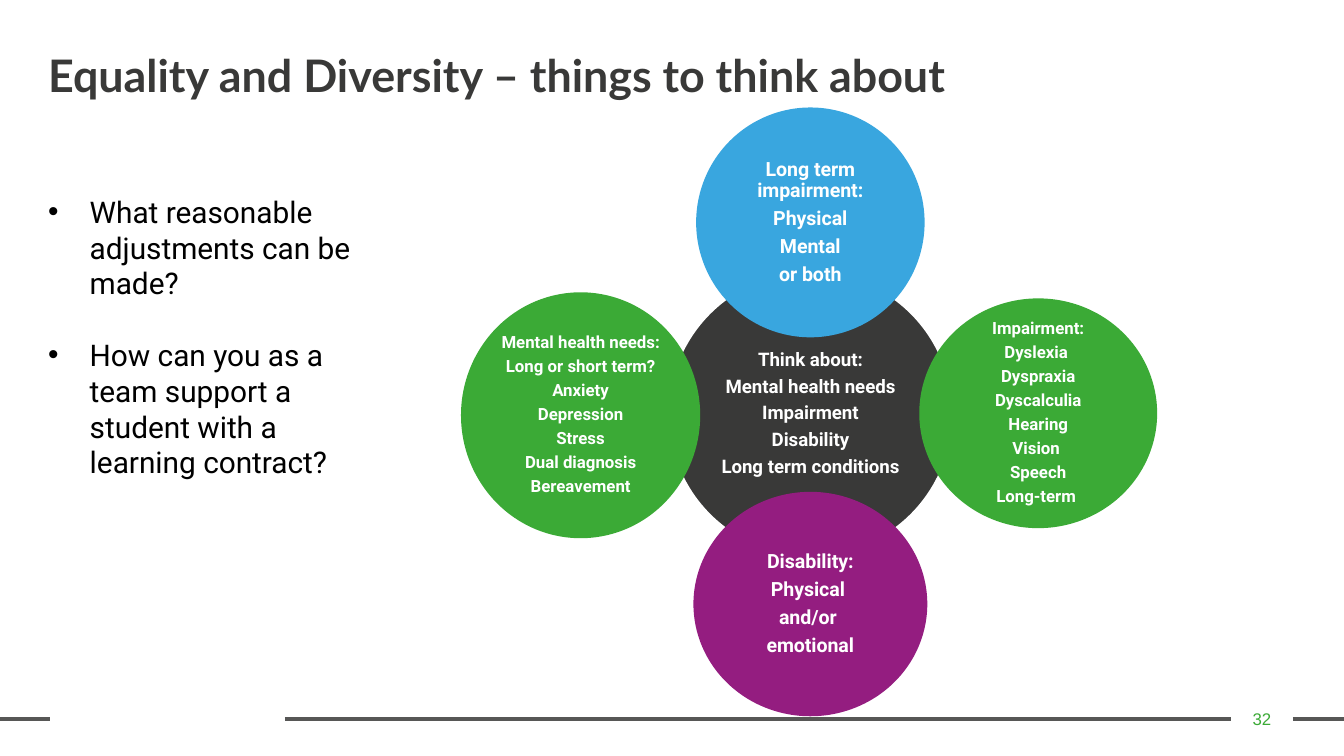
from lxml.etree import SubElement as Sub
from pptx import Presentation
from pptx.dml.color import RGBColor as Rgb
from pptx.enum.shapes import MSO_CONNECTOR as Link, MSO_SHAPE as Form
from pptx.enum.text import MSO_ANCHOR as Anchor, PP_ALIGN as Align
from pptx.oxml.ns import qn
from pptx.util import Inches, Pt

WIDE = Inches(10)
HIGH = WIDE * 9 // 16
COL, ROW = WIDE / 100, HIGH / 56.25
HUES = {
    "white": "FFFFFF", "black": "000000", "dark": "393938", "rule": "575756",
    "blue": "39A6DF", "green": "3BAA36", "plum": "941D80",
}
RULES = [(96.2, 100), (21.2, 91.6), (-0.1, 3.7)]
POINTS = [
    "What reasonable adjustments can be made? ",
    "How can you as a team support a student with a learning contract?",
]
BUBBLES = [
    (60.3, 30.8, 21.2, 21.2, "dark", 10, 0.01,
     ["Think about:", "Mental health needs", "Impairment", "Disability",
      "Long term conditions"]),
    (60.3, 16.55, 17, 17.1, "blue", 10.5, 0.02,
     ["Long term impairment:", "Physical", "Mental", "or both"]),
    (77.25, 30.75, 17.7, 17.1, "green", 9, 0.01,
     ["Impairment:", "Dyslexia ", "Dyspraxia", "Dyscalculia", "Hearing",
      "Vision ", "Speech", "Long-term "]),
    (60.3, 44.95, 17.4, 16.7, "plum", 10.5, 0.02,
     ["Disability:", "Physical ", "and/or ", "emotional"]),
    (43.2, 30.9, 17.8, 18.3, "green", 9, 0.01,
     ["Mental health needs:", "Long or short term?", "Anxiety", "Depression",
      "Stress", "Dual diagnosis", "Bereavement"]),
]


def tint(name):
    return Rgb.from_string(HUES[name])


def place(col, row, cols, rows):
    return [round(n) for n in (col * COL, row * ROW, cols * COL, rows * ROW)]


def mark(para):
    props = para._p.get_or_add_pPr()
    props.set("marL", str(Inches(0.31)))
    props.set("indent", str(-Inches(0.31)))
    Sub(props, qn("a:buFont")).set("typeface", "Arial")
    Sub(props, qn("a:buChar")).set("char", "•")


def write(shape, lines, size, hue, font="Roboto", bold=False, align=Align.LEFT,
          anchor=Anchor.TOP, inset=(0.1, 0.05), lead=None, gap=0, after=0,
          bullet=False):
    frame = shape.text_frame
    frame.word_wrap = True
    frame.vertical_anchor = anchor
    frame.margin_left = frame.margin_right = Inches(inset[0])
    frame.margin_top = frame.margin_bottom = Inches(inset[1])
    for i, line in enumerate(lines):
        para = frame.paragraphs[0] if i == 0 else frame.add_paragraph()
        if bullet:
            mark(para)
        para.alignment = align
        para.line_spacing = lead
        para.space_before = Pt(gap if i else 0)
        para.space_after = Pt(after)
        run = para.add_run()
        run.text = line
        run.font.size, run.font.name, run.font.bold = Pt(size), font, bold
        run.font.color.rgb = tint(hue)


def label(slide, box, lines, size, hue, **style):
    shape = slide.shapes.add_textbox(*place(*box))
    write(shape, lines, size, hue, **style)


def rule(slide, start, end, row=53.5):
    x, y, far, _ = place(start, row, end, 0)
    line = slide.shapes.add_connector(Link.STRAIGHT, x, y, far, y)
    line.line.color.rgb = tint("rule")
    line.line.width = Pt(2.25)
    Sub(line._element.spPr, qn("a:effectLst"))


def bubble(slide, mid, row, cols, rows, hue, size, pad, lines):
    box = place(mid - cols / 2, row - rows / 2, cols, rows)
    shape = slide.shapes.add_shape(Form.OVAL, *box)
    shape.shadow.inherit = False
    shape.fill.solid()
    shape.fill.fore_color.rgb = tint(hue)
    if hue == "dark":
        shape.line.color.rgb = tint("white")
        shape.line.width = Pt(1)
    else:
        shape.line.fill.background()
    write(shape, lines, size, "white", bold=True, align=Align.CENTER,
          anchor=Anchor.MIDDLE, inset=(pad, pad), lead=0.9,
          after=round(size * 0.35, 1))


def main():
    deck = Presentation()
    deck.slide_width, deck.slide_height = WIDE, HIGH
    slide = deck.slides.add_slide(deck.slide_layouts[6])
    for start, end in RULES:
        rule(slide, start, end)
    label(slide, (91.6, 52, 4.6, 3), ["32"], 9, "green", font="Arial",
          align=Align.CENTER, anchor=Anchor.MIDDLE, inset=(0.07, 0.04))
    label(slide, (2.6, 3.5, 83.8, 6.4),
          ["Equality and Diversity – things to think about"], 24, "dark",
          font="Lato", bold=True, lead=0.9)
    label(slide, (2.6, 13.9, 25.7, 22.6), POINTS, 16, "black", gap=19.2,
          bullet=True)
    for item in BUBBLES:
        bubble(slide, *item)
    deck.save("out.pptx")


if __name__ == "__main__":
    main()
